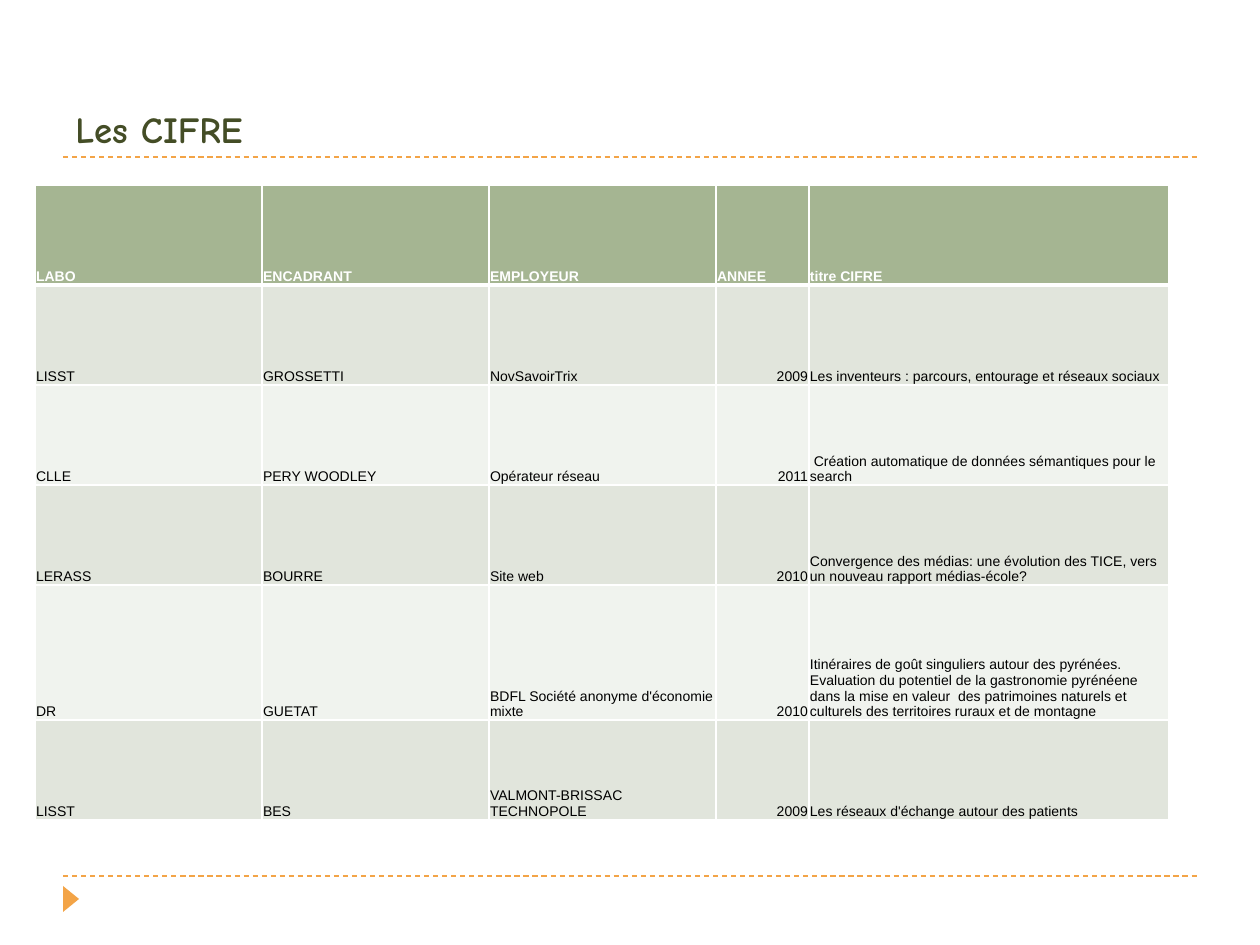
from lxml import etree
from pptx import Presentation
from pptx.dml.color import RGBColor
from pptx.enum import dml, shapes, text
from pptx.oxml import ns
from pptx.util import Emu, Pt

SCALE = 914400 / 126
HUES = {
    "title": "444D26", "accent": "F3A447", "head": "A5B592",
    "odd": "E1E5DC", "even": "F0F3EE", "white": "FFFFFF", "black": "000000",
}
COLS = [227, 227, 227, 93, 360]
ROWS = [100, 100, 100, 100, 135, 100]
DATA = [
    ["LABO", "ENCADRANT", "EMPLOYEUR", "ANNEE", "titre CIFRE"],
    ["LISST", "GROSSETTI", "NovSavoirTrix", "2009",
     "Les inventeurs : parcours, entourage et réseaux sociaux"],
    ["CLLE", "PERY WOODLEY", "Opérateur réseau", "2011",
     " Création automatique de données sémantiques pour le search"],
    ["LERASS", "BOURRE", "Site web", "2010",
     "Convergence des médias: une évolution des TICE, vers un nouveau rapport médias-école?"],
    ["DR", "GUETAT", "BDFL Société anonyme d'économie mixte", "2010",
     "Itinéraires de goût singuliers autour des pyrénées. Evaluation du potentiel "
     "de la gastronomie pyrénéene dans la mise en valeur  des patrimoines naturels "
     "et culturels des territoires ruraux et de montagne"],
    ["LISST", "BES", "VALMONT-BRISSAC TECHNOPOLE", "2009",
     "Les réseaux d'échange autour des patients"],
]


def px(n):
    return Emu(round(n * SCALE))


def hue(name):
    return RGBColor.from_string(HUES[name])


def style(para, face, size, color, bold):
    font = para.font
    font.name, font.size, font.bold = face, Pt(size), bold
    font.color.rgb = hue(color)


def rule(slide, x, y, w):
    line = slide.shapes.add_connector(
        shapes.MSO_CONNECTOR.STRAIGHT, px(x), px(y), px(x + w), px(y))
    line.line.color.rgb = hue("accent")
    line.line.width = Pt(0.75)
    line.line.dash_style = dml.MSO_LINE.DASH
    etree.SubElement(line._element.spPr, ns.qn("a:effectLst"))


def header(slide, x, y, w, h):
    rule(slide, x, y + h, w)
    frame = slide.shapes.add_textbox(px(x), px(y), px(w), px(h)).text_frame
    frame.word_wrap = True
    frame.vertical_anchor = text.MSO_ANCHOR.BOTTOM
    para = frame.paragraphs[0]
    para.text = "Les CIFRE"
    style(para, "Comic Neue", 21, "title", True)


def footer(slide, x, y, w):
    rule(slide, x, y, w)
    mark = slide.shapes.add_shape(
        shapes.MSO_SHAPE.ISOSCELES_TRIANGLE, px(x - 5), px(y + 15), px(26), px(16))
    mark.rotation = 90
    mark.shadow.inherit = False
    mark.fill.solid()
    mark.fill.fore_color.rgb = hue("accent")
    mark.line.fill.background()


def edge(cell, sides):
    props = cell._tc.get_or_add_tcPr()
    for i, (side, width) in enumerate(sides.items()):
        line = etree.Element(ns.qn("a:ln" + side), w=str(Pt(width)))
        fill = etree.SubElement(line, ns.qn("a:solidFill"))
        etree.SubElement(fill, ns.qn("a:srgbClr"), val=HUES["white"])
        props.insert(i, line)


def fill_cell(cell, value, r, c):
    head = r == 0
    cell.fill.solid()
    cell.fill.fore_color.rgb = hue("head" if head else "odd" if r % 2 else "even")
    cell.margin_left = cell.margin_right = cell.margin_top = px(1)
    cell.margin_bottom = 0
    cell.vertical_anchor = text.MSO_ANCHOR.BOTTOM
    para = cell.text_frame.paragraphs[0]
    para.text = value
    style(para, "Arial", 8, "white" if head else "black", head)
    if c == 3 and not head:
        para.alignment = text.PP_ALIGN.RIGHT
    edge(cell, {"L": 1, "R": 1, "T": 3 if r == 1 else 1, "B": 3 if head else 1})


def grid(slide, x, y):
    table = slide.shapes.add_table(
        len(ROWS), len(COLS), px(x), px(y), px(sum(COLS)), px(sum(ROWS))).table
    for col, w in zip(table.columns, COLS):
        col.width = px(w)
    for r, h in enumerate(ROWS):
        table.rows[r].height = px(h)
        for c, value in enumerate(DATA[r]):
            fill_cell(table.cell(r, c), value, r, c)


def main():
    deck = Presentation()
    deck.slide_width, deck.slide_height = px(1260), px(945)
    slide = deck.slides.add_slide(deck.slide_layouts[6])
    footer(slide, 63, 876, 1134)
    header(slide, 63, 21, 1134, 136)
    grid(slide, 35, 185)
    deck.save("out.pptx")


if __name__ == "__main__":
    main()
